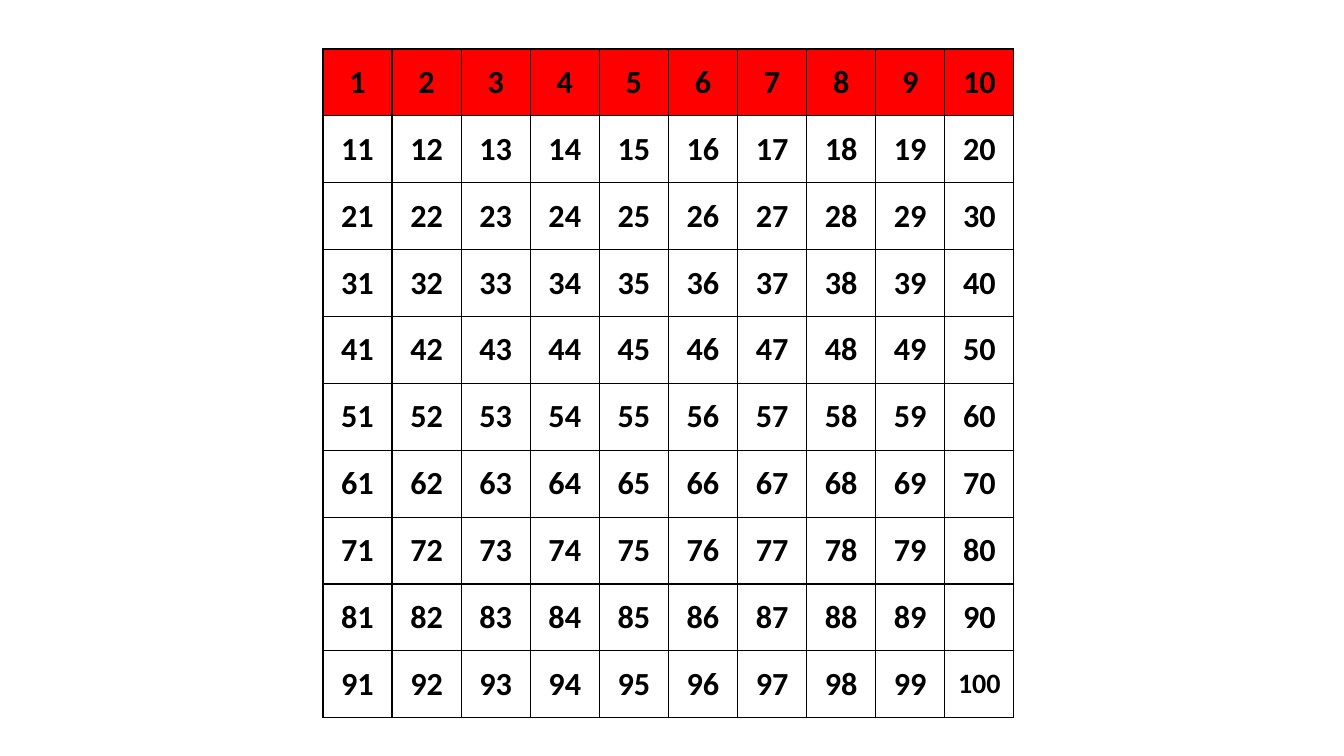
from lxml.etree import SubElement
from pptx import Presentation
from pptx.dml.color import RGBColor
from pptx.enum.text import MSO_ANCHOR, PP_ALIGN
from pptx.oxml.ns import qn
from pptx.util import Emu, Pt

BLACK = RGBColor(0x00, 0x00, 0x00)
RED = RGBColor(0xFF, 0x00, 0x00)
SIZE = 10
EMU_PER_PX = 914400 / 100.8


def px(length):
    return Emu(round(length * EMU_PER_PX))


def add_borders(cell):
    properties = cell._tc.get_or_add_tcPr()
    for position, side in enumerate(("a:lnL", "a:lnR", "a:lnT", "a:lnB")):
        line = SubElement(properties, qn(side), w=str(Pt(1)))
        fill = SubElement(line, qn("a:solidFill"))
        SubElement(fill, qn("a:srgbClr"), val=str(BLACK))
        # Borders come before the cell fill
        properties.insert(position, line)


# Blank slide
presentation = Presentation()
presentation.slide_width = px(1344)
presentation.slide_height = px(756)
slide = presentation.slides.add_slide(presentation.slide_layouts[6])

# Hundred square
width, height = px(691), px(669)
table = slide.shapes.add_table(SIZE, SIZE, px(323), px(49), width, height).table
table.first_row = False
table.horz_banding = False
for column in table.columns:
    column.width = Emu(width // SIZE)
for row in table.rows:
    row.height = Emu(height // SIZE)

# Numbers 1 to 100, with the first row in red
for index, cell in enumerate(table.iter_cells()):
    number = index + 1
    if number <= SIZE:
        cell.fill.solid()
        cell.fill.fore_color.rgb = RED
    else:
        cell.fill.background()
    add_borders(cell)
    cell.vertical_anchor = MSO_ANCHOR.MIDDLE
    cell.margin_left = cell.margin_right = px(13)
    cell.margin_top = cell.margin_bottom = px(6)
    paragraph = cell.text_frame.paragraphs[0]
    paragraph.alignment = PP_ALIGN.CENTER
    run = paragraph.add_run()
    run.text = str(number)
    run.font.name = "Calibri"
    run.font.size = Pt(20 if number == 100 else 23)
    run.font.bold = True
    run.font.color.rgb = BLACK

presentation.save("out.pptx")
